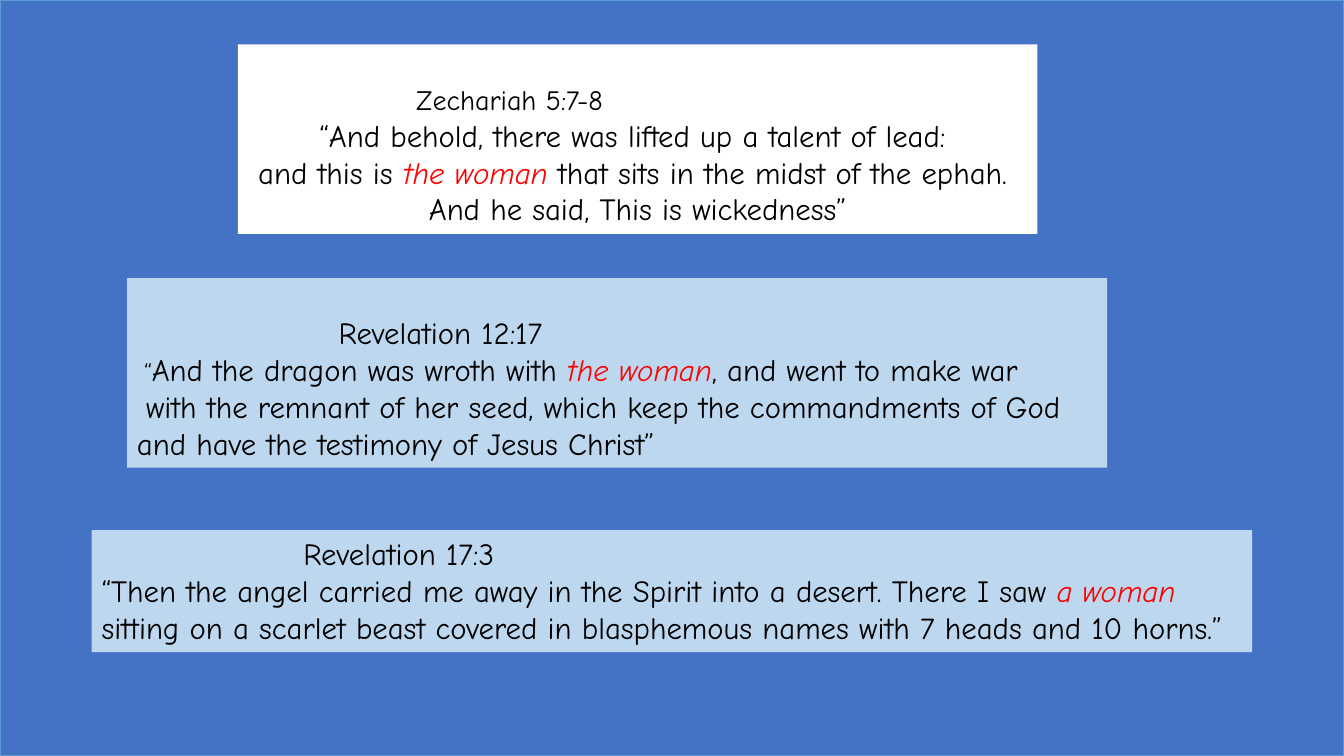
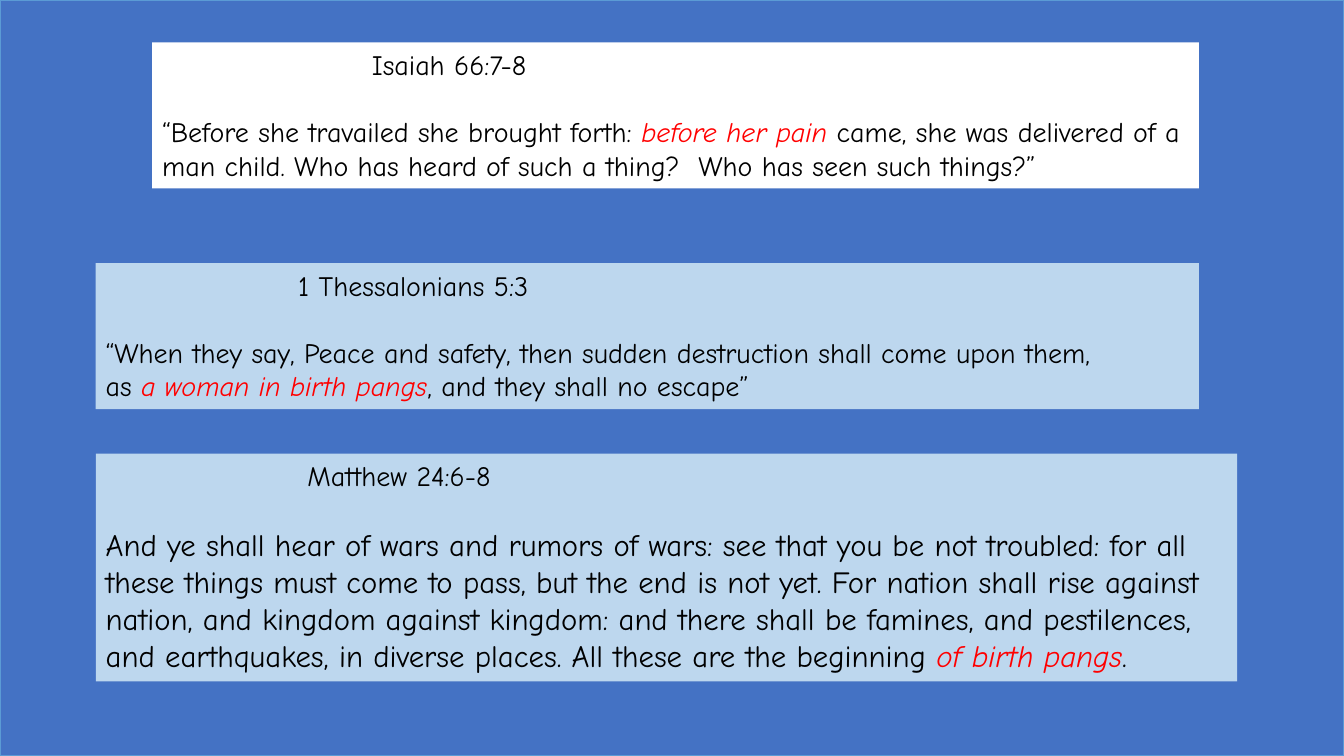
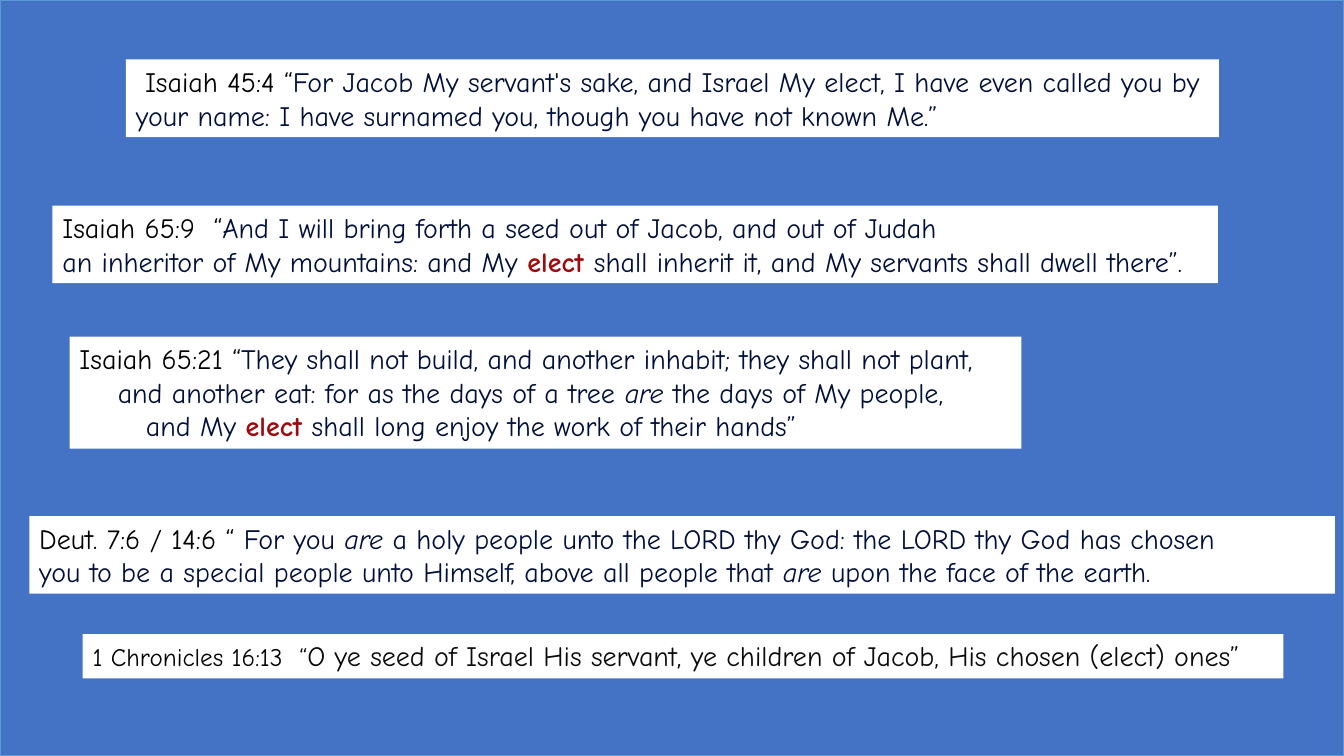
from dataclasses import dataclass

from pptx import Presentation
from pptx.dml.color import RGBColor
from pptx.enum.shapes import MSO_SHAPE
from pptx.enum.text import MSO_ANCHOR, PP_ALIGN
from pptx.util import Emu, Pt

PX = 9144  # one px is a hundredth of an inch
SLIDE_WIDTH, SLIDE_HEIGHT = 1333, 750
FONT = "Comic Neue"
SIDE_INSET, EDGE_INSET = 10, 5

COLOURS = {
    "backdrop": "4472C4",
    "backdrop_edge": "5B9BD5",
    "white": "FFFFFF",
    "pale": "BDD7EE",
    "black": "000000",
    "soft_black": "0A0A0A",
    "red": "FF0000",
    "dark_red": "9E0B0F",
    "navy": "01103A",
}


@dataclass
class Style:
    colour: str = "black"
    bold: bool = False
    italic: bool = False
    size: int = 0  # 0 takes the size of the line


PLAIN = Style()
SMALL = Style(size=18)
STRESS = Style("red", italic=True)
VERSE = Style("navy")
VERSE_ITALIC = Style("navy", italic=True)
ELECT = Style("dark_red", bold=True)
SOFT = Style("soft_black")


@dataclass
class Line:
    runs: list  # pairs of text and style
    size: int = 20
    indent: int = 0  # px before the first word
    centred: bool = False
    after: int = 0  # points


def px(length):
    return Emu(length * PX)


def colour(name):
    return RGBColor.from_string(COLOURS[name])


def add_rect(slide, box, fill):
    rect = slide.shapes.add_shape(MSO_SHAPE.RECTANGLE, *map(px, box))
    rect.shadow.inherit = False
    rect.fill.solid()
    rect.fill.fore_color.rgb = colour(fill)
    rect.line.fill.background()
    return rect


def add_slide(deck):
    """Blank slide covered by the blue backdrop."""
    slide = deck.slides.add_slide(deck.slide_layouts[6])
    backdrop = add_rect(slide, (0, 0, SLIDE_WIDTH, SLIDE_HEIGHT), "backdrop")
    backdrop.line.color.rgb = colour("backdrop_edge")
    backdrop.line.width = Pt(1)
    return slide


def write_line(paragraph, line):
    paragraph.alignment = PP_ALIGN.CENTER if line.centred else PP_ALIGN.LEFT
    if line.indent:
        paragraph._p.get_or_add_pPr().set("indent", str(px(line.indent)))
    if line.after:
        paragraph.space_after = Pt(line.after)
    for text, style in line.runs:
        run = paragraph.add_run()
        run.text = text
        font = run.font
        font.name = FONT
        font.size = Pt(style.size or line.size)
        font.color.rgb = colour(style.colour)
        font.bold = style.bold
        font.italic = style.italic


def add_passage(slide, box, fill, lines, headroom=0):
    """Scripture panel; headroom is free space above its first line."""
    frame = add_rect(slide, box, fill).text_frame
    frame.word_wrap = True
    frame.vertical_anchor = MSO_ANCHOR.TOP
    frame.margin_left = frame.margin_right = px(SIDE_INSET)
    frame.margin_top = px(EDGE_INSET + headroom)
    frame.margin_bottom = px(EDGE_INSET)
    for number, line in enumerate(lines):
        paragraph = frame.add_paragraph() if number else frame.paragraphs[0]
        write_line(paragraph, line)


def reference(text, indent, size=20, after=0):
    return Line([(text, PLAIN)], size, indent, after=after)


def build_woman(deck):
    slide = add_slide(deck)
    add_passage(slide, (236, 44, 793, 188), "white", [
        reference("Zechariah 5:7-8", 167),
        Line([("“And behold, there was lifted up a talent of lead: ", PLAIN)],
             22, centred=True),
        Line([("and this is ", PLAIN), ("the woman ", STRESS),
              ("that sits in the midst of the ephah. ", PLAIN)],
             22, centred=True),
        Line([("And he said, This is wickedness”", PLAIN)], 22, centred=True),
    ], headroom=33)
    add_passage(slide, (126, 276, 972, 188), "pale", [
        reference("Revelation 12:17", 200, 22),
        Line([("“", SMALL), ("And the dragon was wroth with ", PLAIN),
              ("the woman", STRESS), (", and went to make war", PLAIN)],
             22, indent=7),
        Line([("with the remnant of her seed, which keep the commandments"
               " of God", PLAIN)], 22, indent=9),
        Line([("and have the testimony of Jesus Christ”", PLAIN)], 22),
    ], headroom=30)
    add_passage(slide, (91, 526, 1151, 121), "pale", [
        reference("Revelation 17:3", 200, 22),
        Line([("“Then the angel carried me away in the Spirit into a desert."
               " There I saw ", PLAIN), ("a woman ", STRESS),
              ("sitting on a scarlet beast covered in blasphemous names with"
               " 7 heads and 10 horns.”", PLAIN)], 22),
    ])


def build_birth_pangs(deck):
    slide = add_slide(deck)
    gap = 24  # one line below the reference
    add_passage(slide, (151, 42, 1038, 145), "white", [
        reference("Isaiah 66:7-8", 208, after=gap),
        Line([("“Before she travailed she brought forth: ", PLAIN),
              ("before her pain ", STRESS),
              ("came, she was delivered of a man child. Who has heard of such"
               " a thing?  Who has seen such things?”", PLAIN)]),
    ])
    add_passage(slide, (95, 261, 1094, 145), "pale", [
        reference("1 Thessalonians 5:3", 191, after=gap),
        Line([("“When they say, Peace and safety, then sudden destruction"
               " shall come upon them,", PLAIN)]),
        Line([("as ", PLAIN), ("a woman in birth pangs", STRESS),
              (", and they shall no escape”", PLAIN)]),
    ])
    add_passage(slide, (95, 450, 1132, 226), "pale", [
        reference("Matthew 24:6-8", 200, after=gap),
        Line([("And ye shall hear of wars and rumors of wars: see that you be"
               " not troubled: for all these things must come to pass, but the"
               " end is not yet. For nation shall rise against nation, and"
               " kingdom against kingdom: and there shall be famines, and"
               " pestilences, and earthquakes, in diverse places. All these"
               " are the beginning ", PLAIN),
              ("of birth pangs", STRESS), (".", PLAIN)], 22),
    ])


def build_elect(deck):
    slide = add_slide(deck)
    add_passage(slide, (125, 59, 1084, 77), "white", [
        Line([("Isaiah 45:4 “", PLAIN),
              ("For Jacob My servant's sake, and Israel My elect, I have even"
               " called you by your name: I have surnamed you, though you have"
               " not known Me.”", VERSE)], indent=9),
    ])
    add_passage(slide, (52, 204, 1156, 77), "white", [
        Line([("Isaiah 65:9  “", PLAIN),
              ("And I will bring forth a seed out of Jacob, and out of Judah",
               VERSE)]),
        Line([("an inheritor of My mountains: and My ", VERSE),
              ("elect ", ELECT),
              ("shall inherit it, and My servants shall dwell there”.",
               VERSE)]),
    ])
    add_passage(slide, (69, 334, 944, 111), "white", [
        Line([("Isaiah 65:21 “", PLAIN),
              ("They shall not build, and another inhabit; they shall not"
               " plant,", VERSE)]),
        Line([("and another eat: for as the days of a tree ", VERSE),
              ("are ", VERSE_ITALIC), ("the days of My people,", VERSE)],
             indent=38),
        Line([("and My ", VERSE), ("elect", ELECT),
              (" shall long enjoy the work of their hands”", VERSE)],
             indent=66),
    ])
    add_passage(slide, (29, 512, 1295, 77), "white", [
        Line([("Deut. 7:6 / 14:6 “ ", PLAIN), ("For you ", VERSE),
              ("are", VERSE_ITALIC),
              (" a holy people unto the LORD thy God: the LORD thy God has"
               " chosen", VERSE)]),
        Line([("you to be a special people unto Himself, above all people"
               " that ", VERSE), ("are", VERSE_ITALIC),
              (" upon the face of the earth.", VERSE)]),
    ])
    add_passage(slide, (82, 629, 1191, 44), "white", [
        Line([("1 Chronicles 16:13  “", SMALL),
              ("O ye seed of Israel His servant, ye children of Jacob, His"
               " chosen (elect) ones”", SOFT)]),
    ])


def main():
    deck = Presentation()
    deck.slide_width, deck.slide_height = px(SLIDE_WIDTH), px(SLIDE_HEIGHT)
    build_woman(deck)
    build_birth_pangs(deck)
    build_elect(deck)
    deck.save("out.pptx")


if __name__ == "__main__":
    main()
